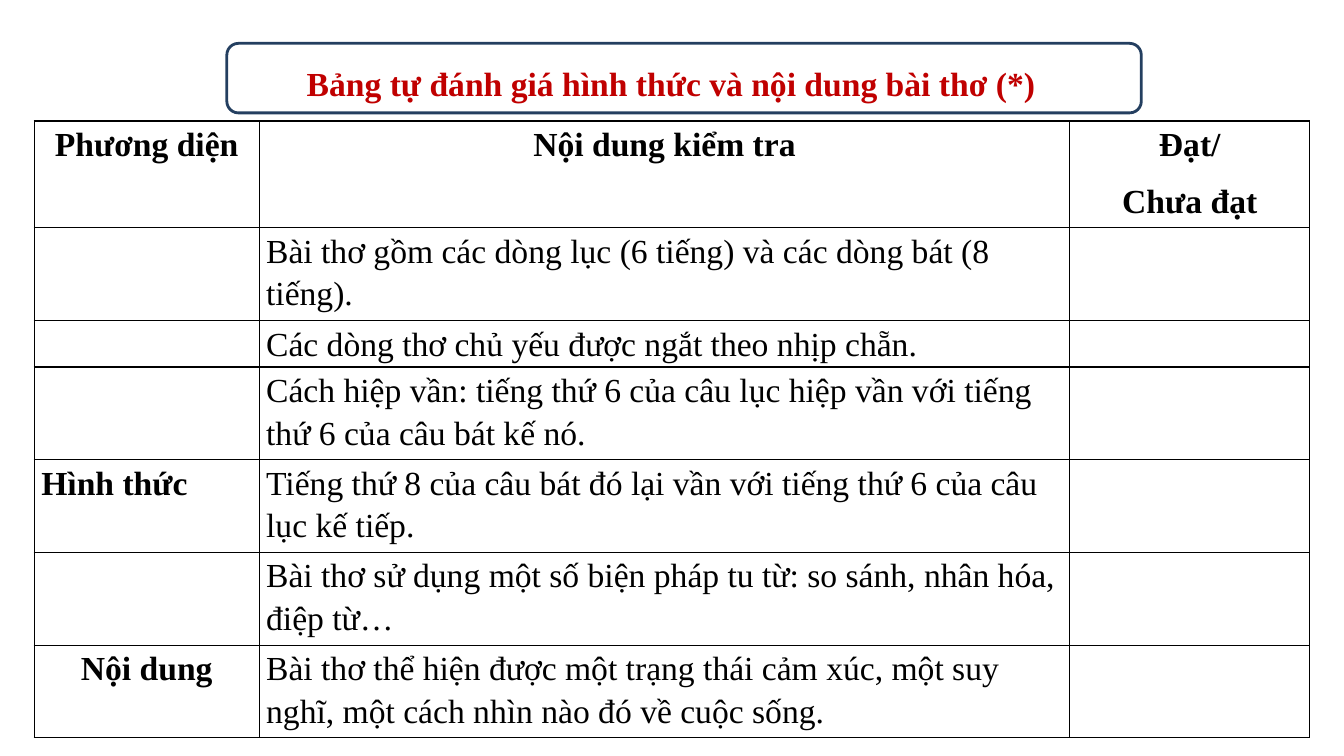
from lxml.etree import SubElement as Sub
from pptx import Presentation
from pptx.dml.color import RGBColor as Rgb
from pptx.enum.shapes import MSO_SHAPE as Shape
from pptx.enum.text import MSO_ANCHOR as Anchor, MSO_AUTO_SIZE as Auto, PP_ALIGN as Align
from pptx.oxml.ns import qn
from pptx.util import Inches, Pt

FONT = "Times New Roman"
HUES = {"ink": "000000", "title": "C00000", "frame": "243F60", "paper": "FFFFFF"}
COLS = [2.23, 8.04, 2.38]
HEAD = ["Phương diện", "Nội dung kiểm tra", "Đạt/\nChưa đạt"]
ROWS = [
    ("", "Bài thơ gồm các dòng lục (6 tiếng) và các dòng bát (8 tiếng)."),
    ("", "Các dòng thơ chủ yếu được ngắt theo nhịp chẵn."),
    ("", "Cách hiệp vần: tiếng thứ 6 của câu lục hiệp vần với tiếng thứ 6 của câu bát kế nó."),
    ("Hình thức", "Tiếng thứ 8 của câu bát đó lại vần với tiếng thứ 6 của câu lục kế tiếp."),
    ("", "Bài thơ sử dụng một số biện pháp tu từ: so sánh, nhân hóa, điệp từ…"),
    ("Nội dung", "Bài thơ thể hiện được một trạng thái cảm xúc, một suy nghĩ, "
                 "một cách nhìn nào đó về cuộc sống."),
]
HIGH = [1.06, 0.92, 0.46] + [0.92] * 4


def hue(name):
    """Return the named colour."""
    return Rgb.from_string(HUES[name])


def write(frame, text, size=24, color="ink", bold=False, align=Align.LEFT):
    """Fill a text frame, one paragraph per line of text."""
    frame.text = text
    for para in frame.paragraphs:
        para.alignment = align
        para.line_spacing = 1.15
        para.space_after = Pt(10)
        font = para.font
        font.name, font.size, font.bold = FONT, Pt(size), bold
        font.color.rgb = hue(color)


def edge(cell):
    """Draw a thin line on all four sides of a cell."""
    props = cell._tc.get_or_add_tcPr()
    for side in ("a:lnL", "a:lnR", "a:lnT", "a:lnB"):
        line = Sub(props, qn(side), w=str(Pt(1)))
        fill = Sub(line, qn("a:solidFill"))
        Sub(fill, qn("a:srgbClr"), val=HUES["ink"])


def banner(slide, left, top, width, height):
    """Place the framed title in the given box."""
    box = slide.shapes.add_shape(Shape.ROUNDED_RECTANGLE, Inches(left), Inches(top),
                                 Inches(width), Inches(height))
    box.shadow.inherit = False
    box.fill.background()
    box.line.color.rgb = hue("frame")
    box.line.width = Pt(2)
    title = slide.shapes.title
    title.left, title.top = Inches(left + 0.13), Inches(top + 0.08)
    title.width, title.height = Inches(width - 0.52), Inches(0.54)
    frame = title.text_frame
    frame.word_wrap = True
    frame.auto_size = Auto.SHAPE_TO_FIT_TEXT
    frame.vertical_anchor = Anchor.TOP
    write(frame, "Bảng tự đánh giá hình thức và nội dung bài thơ (*)",
          color="title", bold=True, align=Align.CENTER)


def grid(slide, left, top):
    """Place the checklist table with its corner at the given point."""
    table = slide.shapes.add_table(len(HIGH), len(COLS), Inches(left), Inches(top),
                                   Inches(sum(COLS)), Inches(sum(HIGH))).table
    table.first_row = table.horz_banding = False
    for col, width in zip(table.columns, COLS):
        col.width = Inches(width)
    for row, high in zip(table.rows, HIGH):
        row.height = Inches(high)
    for r, texts in enumerate([HEAD] + [(*row, "") for row in ROWS]):
        for c, text in enumerate(texts):
            cell = table.cell(r, c)
            edge(cell)
            cell.fill.solid()
            cell.fill.fore_color.rgb = hue("paper")
            cell.margin_left = cell.margin_right = Inches(0.07)
            cell.margin_top = cell.margin_bottom = 0
            if text:
                mid = r == 0 or text == "Nội dung"
                write(cell.text_frame, text, bold=r == 0 or c == 0,
                      align=Align.CENTER if mid else Align.LEFT)


def main():
    """Build the slide and save it."""
    deck = Presentation()
    deck.slide_width, deck.slide_height = Inches(13.33), Inches(7.5)
    slide = deck.slides.add_slide(deck.slide_layouts[5])
    banner(slide, 2.25, 0.43, 9.07, 0.69)
    grid(slide, 0.34, 1.2)
    deck.save("out.pptx")


if __name__ == "__main__":
    main()
